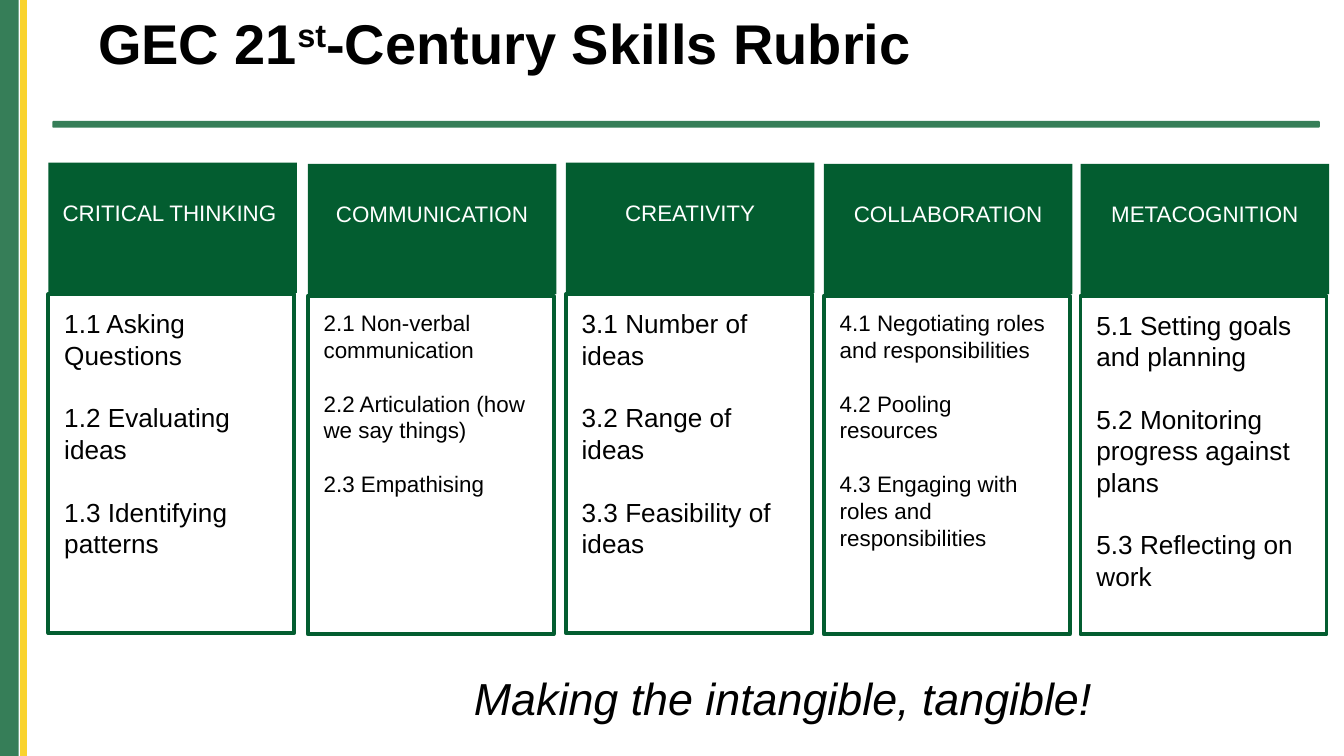
from dataclasses import dataclass

from pptx import Presentation
from pptx.dml.color import RGBColor
from pptx.enum.shapes import MSO_SHAPE
from pptx.enum.text import MSO_ANCHOR, MSO_AUTO_SIZE, PP_ALIGN
from pptx.shapes.autoshape import Shape
from pptx.slide import Slide
from pptx.text.text import TextFrame, _Paragraph, _Run
from pptx.util import Inches, Pt


@dataclass(frozen=True)
class Theme:
    font: str = "Arial"
    dark_green: RGBColor = RGBColor(0x03, 0x5D, 0x30)
    green: RGBColor = RGBColor(0x36, 0x7E, 0x58)
    yellow: RGBColor = RGBColor(0xF9, 0xD3, 0x2E)
    black: RGBColor = RGBColor(0, 0, 0)
    white: RGBColor = RGBColor(0xFF, 0xFF, 0xFF)
    title_size: int = 30
    tagline_size: int = 24
    header_size: int = 12
    large_size: int = 14
    small_size: int = 12
    border: float = 2
    blank_line: float = 1.2


@dataclass(frozen=True)
class Box:
    left: float
    top: float
    width: float
    height: float

    def emu(self) -> tuple[int, ...]:
        return tuple(Inches(n) for n in (self.left, self.top, self.width, self.height))


@dataclass(frozen=True)
class Skill:
    name: str
    criteria: tuple[str, ...]
    size: int
    left: float
    top: float


THEME = Theme()
SLIDE_WIDTH = 10
SLIDE_HEIGHT = SLIDE_WIDTH * 9 / 16
HEADER_WIDTH, HEADER_HEIGHT = 1.85, 0.97
PANEL_WIDTH, PANEL_HEIGHT = 1.83, 2.52

SKILLS = (
    Skill("CRITICAL THINKING ",
          ("1.1 Asking Questions", "1.2 Evaluating ideas", "1.3 Identifying patterns"),
          THEME.large_size, 0.36, 1.21),
    Skill("COMMUNICATION",
          ("2.1 Non-verbal communication", "2.2 Articulation (how we say things)",
           "2.3 Empathising"),
          THEME.small_size, 2.29, 1.22),
    Skill("CREATIVITY",
          ("3.1 Number of ideas", "3.2 Range of ideas", "3.3 Feasibility of ideas"),
          THEME.large_size, 4.21, 1.21),
    Skill("COLLABORATION",
          ("4.1 Negotiating roles and responsibilities", "4.2 Pooling resources",
           "4.3 Engaging with roles and responsibilities"),
          THEME.small_size, 6.13, 1.22),
    Skill("METACOGNITION",
          ("5.1 Setting goals and planning", "5.2 Monitoring progress against plans",
           "5.3 Reflecting on work"),
          THEME.large_size, 8.04, 1.22),
)


def format_frame(frame: TextFrame, **changes) -> None:
    """Apply the usual margins and wrapping, with any changes on top."""
    values = {
        "word_wrap": True,
        "auto_size": MSO_AUTO_SIZE.NONE,
        "vertical_anchor": MSO_ANCHOR.TOP,
        "margin_left": Inches(0.1),
        "margin_right": Inches(0.1),
        "margin_top": Inches(0.05),
        "margin_bottom": Inches(0.05),
    } | changes
    for attribute, value in values.items():
        setattr(frame, attribute, value)


def add_run(paragraph: _Paragraph, text: str, size: float,
            color: RGBColor = THEME.black, **style) -> _Run:
    run = paragraph.add_run()
    run.text = text
    for attribute, value in ({"name": THEME.font, "size": Pt(size)} | style).items():
        setattr(run.font, attribute, value)
    run.font.color.rgb = color
    return run


def add_block(slide: Slide, box: Box, fill: RGBColor | None = None,
              border: RGBColor | None = None,
              kind: MSO_SHAPE = MSO_SHAPE.RECTANGLE) -> Shape:
    block = slide.shapes.add_shape(kind, *box.emu())
    block.shadow.inherit = False
    if fill is None:
        block.fill.background()
    else:
        block.fill.solid()
        block.fill.fore_color.rgb = fill
    if border is None:
        block.line.fill.background()
    else:
        block.line.color.rgb = border
        block.line.width = Pt(THEME.border)
    return block


def add_frame_bars(slide: Slide) -> None:
    for left, width, color in ((0, 0.12, THEME.green), (0.11, 0.03, THEME.green),
                               (0.15, 0.05, THEME.yellow)):
        add_block(slide, Box(left, 0, width, SLIDE_HEIGHT), color)
    rule = add_block(slide, Box(0.39, 0.9, 9.43, 0.05), THEME.green,
                     kind=MSO_SHAPE.ROUNDED_RECTANGLE)
    rule.adjustments[0] = 0.17


def add_title(slide: Slide) -> None:
    title = slide.shapes.title
    title.left, title.top, title.width, title.height = Box(0.41, 0.08, 9.46, 0.68).emu()
    format_frame(title.text_frame, margin_left=Inches(0.32), margin_right=Inches(0.07),
                 margin_top=Inches(0.04), margin_bottom=Inches(0.04))
    heading = title.text_frame.paragraphs[0]
    heading.alignment = PP_ALIGN.LEFT
    heading.line_spacing = 0.9
    add_run(heading, "GEC 21", THEME.title_size, bold=True)
    ordinal = add_run(heading, "st", THEME.title_size, bold=True)
    ordinal.font._element.set("baseline", "30000")
    add_run(heading, "-Century Skills Rubric", THEME.title_size, bold=True)


def add_skill(slide: Slide, skill: Skill) -> None:
    header = add_block(slide, Box(skill.left, skill.top, HEADER_WIDTH, HEADER_HEIGHT),
                       THEME.dark_green)
    # The deep bottom margin lifts the name above the middle of the header.
    format_frame(header.text_frame, vertical_anchor=MSO_ANCHOR.MIDDLE,
                 margin_bottom=Inches(0.28))
    name = header.text_frame.paragraphs[0]
    name.alignment = PP_ALIGN.CENTER
    add_run(name, skill.name, THEME.header_size, THEME.white)

    panel_top = skill.top + HEADER_HEIGHT + 0.01
    add_block(slide, Box(skill.left, panel_top, PANEL_WIDTH, PANEL_HEIGHT),
              border=THEME.dark_green)
    criteria = slide.shapes.add_textbox(
        *Box(skill.left + 0.02, panel_top + 0.05, 1.8, 2.22).emu()).text_frame
    format_frame(criteria)
    for index, text in enumerate(skill.criteria):
        criterion = criteria.add_paragraph() if index else criteria.paragraphs[0]
        if index:
            criterion.space_before = Pt(skill.size * THEME.blank_line)
        add_run(criterion, text, skill.size)


def add_tagline(slide: Slide) -> None:
    frame = slide.shapes.add_textbox(*Box(2.53, 4.94, 6.68, 0.5).emu()).text_frame
    format_frame(frame)
    tagline = frame.paragraphs[0]
    tagline.alignment = PP_ALIGN.CENTER
    add_run(tagline, "Making the intangible, tangible! ", THEME.tagline_size, italic=True)


def main() -> None:
    deck = Presentation()
    deck.slide_width, deck.slide_height = Inches(SLIDE_WIDTH), Inches(SLIDE_HEIGHT)
    slide = deck.slides.add_slide(deck.slide_layouts.get_by_name("Title Only"))
    add_frame_bars(slide)
    add_title(slide)
    for skill in SKILLS:
        add_skill(slide, skill)
    add_tagline(slide)
    deck.save("out.pptx")


if __name__ == "__main__":
    main()
